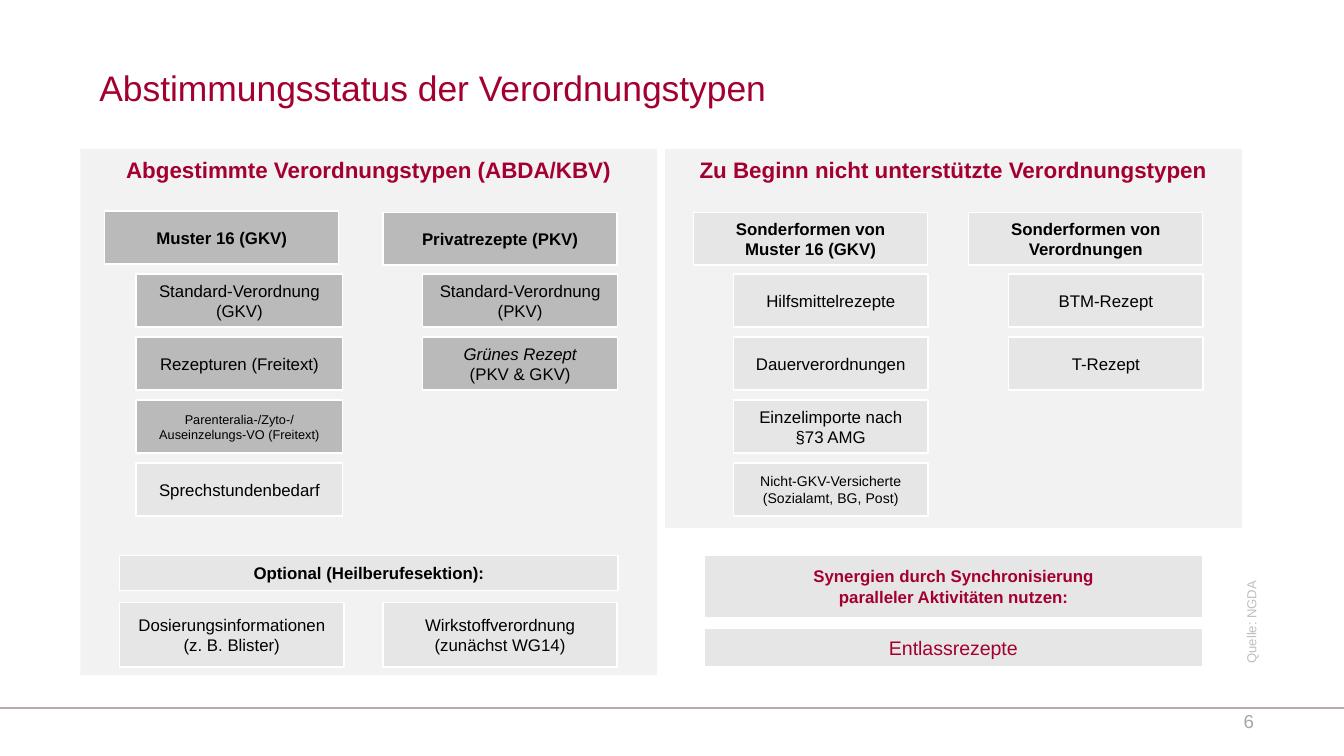
from copy import deepcopy
from dataclasses import dataclass

from lxml import etree
from pptx import Presentation
from pptx.dml.color import RGBColor
from pptx.enum.shapes import MSO_CONNECTOR, MSO_SHAPE
from pptx.enum.text import MSO_ANCHOR, PP_ALIGN
from pptx.oxml.ns import qn
from pptx.util import Cm, Pt

RECT = MSO_SHAPE.RECTANGLE
STRAIGHT = MSO_CONNECTOR.STRAIGHT
TOP, MIDDLE = MSO_ANCHOR.TOP, MSO_ANCHOR.MIDDLE
LEFT, MID, RIGHT = PP_ALIGN.LEFT, PP_ALIGN.CENTER, PP_ALIGN.RIGHT

COLORS = {
    "red": "A30030", "black": "000000", "white": "FFFFFF", "panel": "F2F2F2",
    "dark": "BABABA", "light": "E7E6E6", "rule": "B7ABAA",
    "page": "A6A6A6", "source": "BFBFBF",
}
HEAD_W, ITEM_W, WIDE_W, ROW_H = 4.42, 3.68, 9.42, 1.0
HEAD_Y, ITEM_Y, PITCH, INDENT = 4.01, 5.18, 1.19, 0.75
FOOT_X, SIDE_X, FOOT_Y = 2.26, 13.31, 10.49


@dataclass(frozen=True)
class Style:
    size: float = 9
    color: str = "black"
    bold: bool = False
    slant: bool = False
    align: PP_ALIGN = MID
    anchor: MSO_ANCHOR = MIDDLE


@dataclass(frozen=True)
class Box:
    x: float
    y: float
    w: float
    h: float
    text: str
    fill: str = "light"
    style: Style = Style()
    edge: bool = True


@dataclass(frozen=True)
class Item:
    text: str
    fill: str = "light"
    style: Style = Style()


@dataclass(frozen=True)
class Group:
    x: float
    head: str
    items: tuple[Item, ...]
    fill: str = "light"
    y: float = HEAD_Y
    item_x: float = INDENT
    item_w: float = ITEM_W


BOLD = Style(bold=True)
PANEL = Style(12, "red", True, anchor=TOP)

PANELS = (
    Box(1.52, 2.82, 10.9, 9.93, "Abgestimmte Verordnungstypen (ABDA/KBV)", "panel", PANEL, False),
    Box(12.57, 2.82, 10.9, 7.16, "Zu Beginn nicht unterstützte Verordnungstypen", "panel", PANEL, False),
)
GROUPS = (
    Group(1.98, "Muster 16 (GKV)", (
        Item("Standard-Verordnung\n(GKV)", "dark"),
        Item("Rezepturen (Freitext)", "dark"),
        Item("Parenteralia-/Zyto-/Auseinzelungs-VO (Freitext)", "dark", Style(6.8)),
        Item("Sprechstundenbedarf"),
    ), "dark", 3.99, 0.59, 3.91),
    Group(7.24, "Privatrezepte (PKV)", (
        Item("Standard-Verordnung (PKV)", "dark"),
        Item("Grünes Rezept\n(PKV & GKV)", "dark", Style(slant=True)),
    ), "dark"),
    Group(13.11, "Sonderformen von\nMuster 16 (GKV)", (
        Item("Hilfsmittelrezepte"),
        Item("Dauerverordnungen"),
        Item("Einzelimporte nach §73 AMG"),
        Item("Nicht-GKV-Versicherte\n(Sozialamt, BG, Post)", style=Style(7.5)),
    )),
    Group(18.31, "Sonderformen von Verordnungen", (
        Item("BTM-Rezept"),
        Item("T-Rezept"),
    )),
)
FOOT = (
    Box(FOOT_X, FOOT_Y, WIDE_W, 0.66, "Optional (Heilberufesektion):", style=BOLD),
    Box(FOOT_X, 11.38, 4.24, 1.22, "Dosierungsinformationen (z. B. Blister)"),
    Box(7.24, 11.38, HEAD_W, 1.22, "Wirkstoffverordnung\n(zunächst WG14)"),
    Box(SIDE_X, FOOT_Y, WIDE_W, 1.17,
        "Synergien durch Synchronisierung\nparalleler Aktivitäten nutzen:",
        style=Style(9, "red", True)),
    Box(SIDE_X, 11.86, WIDE_W, 0.74, "Entlassrezepte", style=Style(10.5, "red")),
)


def tint(name: str) -> RGBColor:
    """Give the named colour."""
    return RGBColor.from_string(COLORS[name])


def write(shape, text: str, style: Style) -> None:
    """Fill a shape with styled text."""
    frame = shape.text_frame
    frame.word_wrap = True
    frame.vertical_anchor = style.anchor
    para = frame.paragraphs[0]
    para.text = text
    para.alignment = style.align
    form = {"name": "Arial", "size": Pt(style.size), "bold": style.bold}
    for index, run in enumerate(para.runs):
        for key, value in form.items():
            setattr(run.font, key, value)
        run.font.italic = style.slant and index == 0
        run.font.color.rgb = tint(style.color)
    for gap in para._p.findall(qn("a:br")):
        gap.insert(0, deepcopy(para.runs[0]._r.rPr))


def draw_box(slide, box: Box) -> None:
    """Draw a filled box with its text."""
    shape = slide.shapes.add_shape(RECT, Cm(box.x), Cm(box.y), Cm(box.w), Cm(box.h))
    shape.shadow.inherit = False
    shape.fill.solid()
    shape.fill.fore_color.rgb = tint(box.fill)
    if box.edge:
        shape.line.color.rgb = tint("white")
        shape.line.width = Pt(0.75)
    else:
        shape.line.fill.background()
    write(shape, box.text, box.style)


def draw_group(slide, group: Group) -> None:
    """Draw a head box and the column of items below it."""
    draw_box(slide, Box(group.x, group.y, HEAD_W, ROW_H, group.head, group.fill, BOLD))
    for row, item in enumerate(group.items):
        draw_box(slide, Box(group.x + group.item_x, ITEM_Y + row * PITCH, group.item_w,
                            ROW_H, item.text, item.fill, item.style))


def draw_text(slide, x: float, y: float, w: float, h: float, text: str,
              style: Style, pads: tuple[float, float] = (0.25, 0.13), turn: float = 0) -> None:
    """Draw a plain text box."""
    shape = slide.shapes.add_textbox(Cm(x), Cm(y), Cm(w), Cm(h))
    shape.rotation = turn
    side, edge = map(Cm, pads)
    margins = {"margin_left": side, "margin_right": side,
               "margin_top": edge, "margin_bottom": edge}
    for key, value in margins.items():
        setattr(shape.text_frame, key, value)
    write(shape, text, style)


def draw_rule(slide, y: float, width: float) -> None:
    """Draw the line above the page number."""
    rule = slide.shapes.add_connector(STRAIGHT, Cm(0), Cm(y), Cm(width), Cm(y))
    rule.line.color.rgb = tint("rule")
    rule.line.width = Pt(0.75)
    etree.SubElement(rule._element.spPr, qn("a:effectLst"))


def main() -> None:
    """Build and save the slide."""
    deck = Presentation()
    deck.slide_width, deck.slide_height = Cm(25.4), Cm(14.28)
    slide = deck.slides.add_slide(deck.slide_layouts[6])
    draw_rule(slide, 13.37, 25.4)
    draw_text(slide, 1.7, 1.14, 22, 1.42, "Abstimmungsstatus der Verordnungstypen",
              Style(19, "red", align=LEFT, anchor=TOP), (0.18, 0.1))
    draw_text(slide, 21.29, 13.36, 2.59, 0.53, "6",
              Style(10, "page", align=RIGHT), (0.18, 0))
    for panel in PANELS:
        draw_box(slide, panel)
    for group in GROUPS:
        draw_group(slide, group)
    for box in FOOT:
        draw_box(slide, box)
    draw_text(slide, 22.15, 11, 3, 0.56, "Quelle: NGDA",
              Style(7, "source", align=LEFT, anchor=TOP), turn=270)
    deck.save("out.pptx")


if __name__ == "__main__":
    main()
